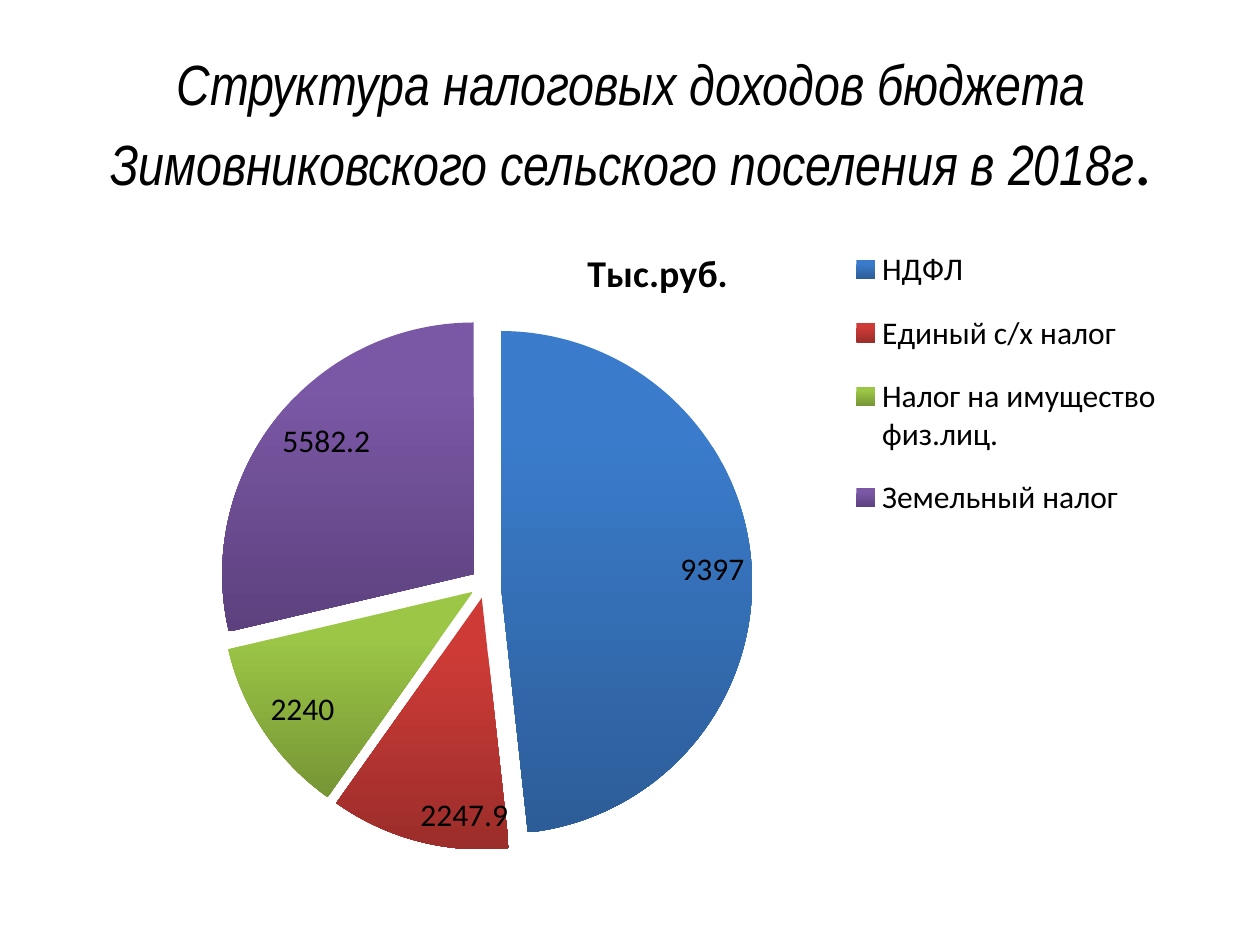
from lxml.etree import SubElement
from pptx import Presentation
from pptx.chart.data import CategoryChartData
from pptx.dml.color import RGBColor
from pptx.enum.chart import XL_CHART_TYPE, XL_LABEL_POSITION, XL_LEGEND_POSITION
from pptx.enum.text import MSO_ANCHOR, PP_ALIGN
from pptx.oxml.ns import qn
from pptx.util import Inches, Pt

# Content
HEAD = "Структура налоговых доходов бюджета Зимовниковского сельского поселения в 2018г"
UNIT = "Тыс.руб."
TAXES = [  # name, value, top colour, bottom colour
    ("НДФЛ", 9397, "3A7CCB", "2C5D98"),
    ("Единый с/х налог", 2247.9, "CE3B37", "9B2D2A"),
    ("Налог на имущество физ.лиц.", 2240, "9CC746", "769535"),
    ("Земельный налог", 5582.2, "7B58A6", "5D417E"),
]


def rgb(code):
    return RGBColor.from_string(code)


def style(font, size, name="Calibri", color="000000", bold=False, italic=False):
    font.size, font.name = Pt(size), name
    font.bold, font.italic = bold, italic
    font.color.rgb = rgb(color)


def write(para, text, **form):
    run = para.add_run()
    run.text = text
    style(run.font, **form)


def place(node, after, x, y, w=None, h=None, inner=False):
    """Put a manual layout, in shares of the chart, after the given child."""
    for old in node.findall(qn("c:layout")):
        node.remove(old)
    lay = SubElement(node, qn("c:layout"))
    spot = 0 if after is None else node.index(node.find(qn(after))) + 1
    node.insert(spot, lay)
    man = SubElement(lay, qn("c:manualLayout"))
    parts = [("layoutTarget", "inner")] if inner else []
    parts += [("xMode", "edge"), ("yMode", "edge"), ("x", x), ("y", y)]
    parts += [(tag, num) for tag, num in (("w", w), ("h", h)) if num]
    for tag, val in parts:
        SubElement(man, qn("c:" + tag)).set("val", str(val))


deck = Presentation()
deck.slide_width, deck.slide_height = Inches(10), Inches(7.5)
slide = deck.slides.add_slide(deck.slide_layouts[5])

# Title
title = slide.shapes.title
title.left, title.top = Inches(0.51), Inches(0.36)
title.width, title.height = Inches(9), Inches(1.25)
frame = title.text_frame
frame.word_wrap = True
frame.vertical_anchor = MSO_ANCHOR.MIDDLE
para = frame.paragraphs[0]
para.alignment = PP_ALIGN.CENTER
write(para, HEAD, size=32.4, name="Arial Narrow", italic=True)
write(para, ".", size=39.6)

# Pie chart
data = CategoryChartData()
data.categories = [tax[0] for tax in TAXES]
data.add_series(UNIT, [tax[1] for tax in TAXES])
chart = slide.shapes.add_chart(
    XL_CHART_TYPE.PIE, Inches(0.59), Inches(1.62), Inches(9.13), Inches(5.59), data
).chart
style(chart.font, 18)
plot = chart.plots[0]
plot.vary_by_categories = True
place(chart.plots[0]._element.getparent(), None, 0.125, 0.16, 0.465, 0.757, inner=True)

# Slices
pie = plot.series[0]
for i, (name, value, top, low) in enumerate(TAXES):
    fill = pie.points[i].format.fill
    fill.gradient()
    fill.gradient_angle = 270
    for stop, code, pos in zip(fill.gradient_stops, (top, low), (0.2, 1)):
        stop.color.rgb = rgb(code)
        stop.position = pos
node = pie._element
gap = SubElement(node, qn("c:explosion"))
gap.set("val", "6")
node.find(qn("c:dPt")).addprevious(gap)

# Value labels
plot.has_data_labels = True
labels = plot.data_labels
labels.show_value = True
labels.show_percentage = False
labels.position = XL_LABEL_POSITION.INSIDE_END
style(labels.font, 18)

# Chart title and legend
chart.has_title = True
write(chart.chart_title.text_frame.paragraphs[0], UNIT, size=21.6, bold=True)
place(chart.chart_title._element, "c:tx", 0.44, 0.05)
chart.has_legend = True
legend = chart.legend
legend.position = XL_LEGEND_POSITION.RIGHT
legend.include_in_layout = False
style(legend.font, 18)
place(legend._element, "c:legendPos", 0.66, 0.03, 0.3, 0.45)

deck.save("out.pptx")
